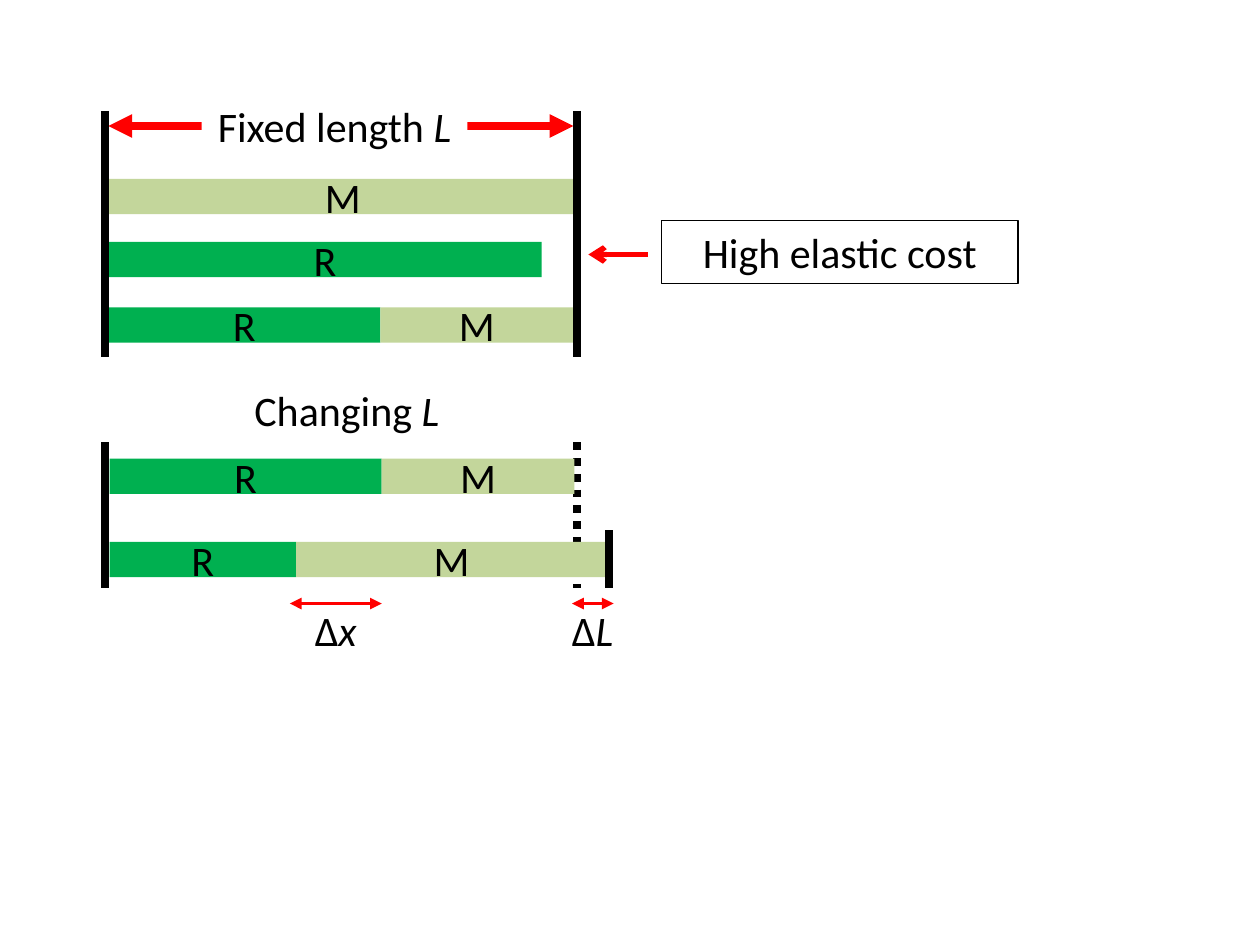
from lxml.etree import SubElement
from pptx import Presentation
from pptx.dml.color import RGBColor
from pptx.enum.dml import MSO_LINE
from pptx.enum.shapes import MSO_CONNECTOR, MSO_SHAPE
from pptx.enum.text import MSO_ANCHOR, MSO_AUTO_SIZE, PP_ALIGN
from pptx.oxml.ns import qn
from pptx.util import Inches, Pt

BLACK = RGBColor(0x00, 0x00, 0x00)
WHITE = RGBColor(0xFF, 0xFF, 0xFF)
RED = RGBColor(0xFF, 0x00, 0x00)
GREEN = RGBColor(0x00, 0xB0, 0x50)
OLIVE = RGBColor(0xC3, 0xD6, 0x9B)
BAR_COLOURS = {"R": GREEN, "M": OLIVE}
BAR_HEIGHT = 0.28
LABEL_HEIGHT = 0.5

# Rows of bars: left, top, then (letter, width) laid end to end
FIXED_ROWS = [
    (0.86, 1.42, [("M", 3.72)]),
    (0.86, 1.92, [("R", 3.44)]),
    (0.86, 2.44, [("R", 2.16), ("M", 1.53)]),
]
CHANGING_ROWS = [
    (0.87, 3.64, [("R", 2.16), ("M", 1.53)]),
    (0.87, 4.30, [("R", 1.48), ("M", 2.47)]),
]

# Walls: x, top, bottom, dash
FIXED_WALLS = [(4.58, 0.88, 2.83, None), (0.83, 0.88, 2.83, None)]
CHANGING_WALLS = [(4.58, 3.51, 4.67, MSO_LINE.ROUND_DOT), (0.83, 3.51, 4.67, None)]
STRETCHED_WALL = (4.83, 4.21, 4.67, None)

# Arrows: start x, end x, y, width in points, head, tail
LENGTH_ARROW = (0.86, 4.55, 1.00, 4.5, "triangle", "triangle")
COST_ARROW = (5.14, 4.67, 2.02, 3, None, "arrow")
DELTA_ARROWS = [
    (2.30, 3.03, 4.79, 2.25, "triangle", "triangle"),
    (4.54, 4.87, 4.79, 2.25, "triangle", "triangle"),
]

# Labels: left, top, width, upright text, italic text
LENGTH_LABEL = (1.60, 0.75, 2.11, "Fixed length ", "L")
COST_LABEL = (5.25, 1.75, 2.83, "High elastic cost", "")
PLAIN_LABELS = [
    (4.44, 4.75, 0.53, "Δ", "L"),
    (2.40, 4.75, 0.54, "Δ", "x"),
    (1.92, 3.00, 1.68, "Changing ", "L"),
]


def set_font(para):
    para.font.size = Pt(24)
    para.font.name = "Calibri"
    para.font.color.rgb = BLACK


def add_bars(page, rows):
    for left, top, bars in rows:
        for letter, width in bars:
            bar = page.shapes.add_shape(MSO_SHAPE.RECTANGLE, Inches(left), Inches(top),
                                        Inches(width), Inches(BAR_HEIGHT))
            bar.shadow.inherit = False
            bar.fill.solid()
            bar.fill.fore_color.rgb = BAR_COLOURS[letter]
            bar.line.fill.background()
            bar.text_frame.vertical_anchor = MSO_ANCHOR.MIDDLE
            para = bar.text_frame.paragraphs[0]
            para.text = letter
            para.alignment = PP_ALIGN.CENTER
            set_font(para)
            left += width


def add_line(page, x1, y1, x2, y2, colour, points):
    line = page.shapes.add_connector(MSO_CONNECTOR.STRAIGHT, Inches(x1), Inches(y1),
                                     Inches(x2), Inches(y2))
    line.line.color.rgb = colour
    line.line.width = Pt(points)
    SubElement(line._element.spPr, qn("a:effectLst"))
    return line


def add_wall(page, x, top, bottom, dash):
    wall = add_line(page, x, top, x, bottom, BLACK, 4.5)
    if dash:
        wall.line.dash_style = dash


def add_arrow(page, start, end, y, points, head, tail):
    arrow = add_line(page, start, y, end, y, RED, points)
    outline = arrow.line._get_or_add_ln()
    for tag, kind in (("a:headEnd", head), ("a:tailEnd", tail)):
        if kind:
            SubElement(outline, qn(tag), type=kind)


def add_label(page, left, top, width, upright, italic, wrap=False):
    box = page.shapes.add_textbox(Inches(left), Inches(top), Inches(width), Inches(LABEL_HEIGHT))
    box.text_frame.word_wrap = wrap
    box.text_frame.auto_size = MSO_AUTO_SIZE.SHAPE_TO_FIT_TEXT
    para = box.text_frame.paragraphs[0]
    para.alignment = PP_ALIGN.CENTER if wrap else PP_ALIGN.LEFT
    set_font(para)
    para.add_run().text = upright
    if italic:
        span = para.add_run()
        span.text = italic
        span.font.italic = True
    return box


def main():
    deck = Presentation()
    deck.slide_width, deck.slide_height = Inches(10), Inches(7.5)
    page = deck.slides.add_slide(deck.slide_layouts[6])

    # Fixed length, with its cost
    add_bars(page, FIXED_ROWS)
    add_arrow(page, *LENGTH_ARROW)
    length_box = add_label(page, *LENGTH_LABEL, wrap=True)
    length_box.fill.solid()
    length_box.fill.fore_color.rgb = WHITE
    cost_box = add_label(page, *COST_LABEL, wrap=True)
    cost_box.line.color.rgb = BLACK
    cost_box.line.width = Pt(0.75)
    add_arrow(page, *COST_ARROW)
    for wall in FIXED_WALLS:
        add_wall(page, *wall)

    # Changing length: bars cover the first walls
    for wall in CHANGING_WALLS:
        add_wall(page, *wall)
    add_bars(page, CHANGING_ROWS)
    add_wall(page, *STRETCHED_WALL)
    for label in PLAIN_LABELS:
        add_label(page, *label)
    for arrow in DELTA_ARROWS:
        add_arrow(page, *arrow)

    deck.save("out.pptx")


if __name__ == "__main__":
    main()
